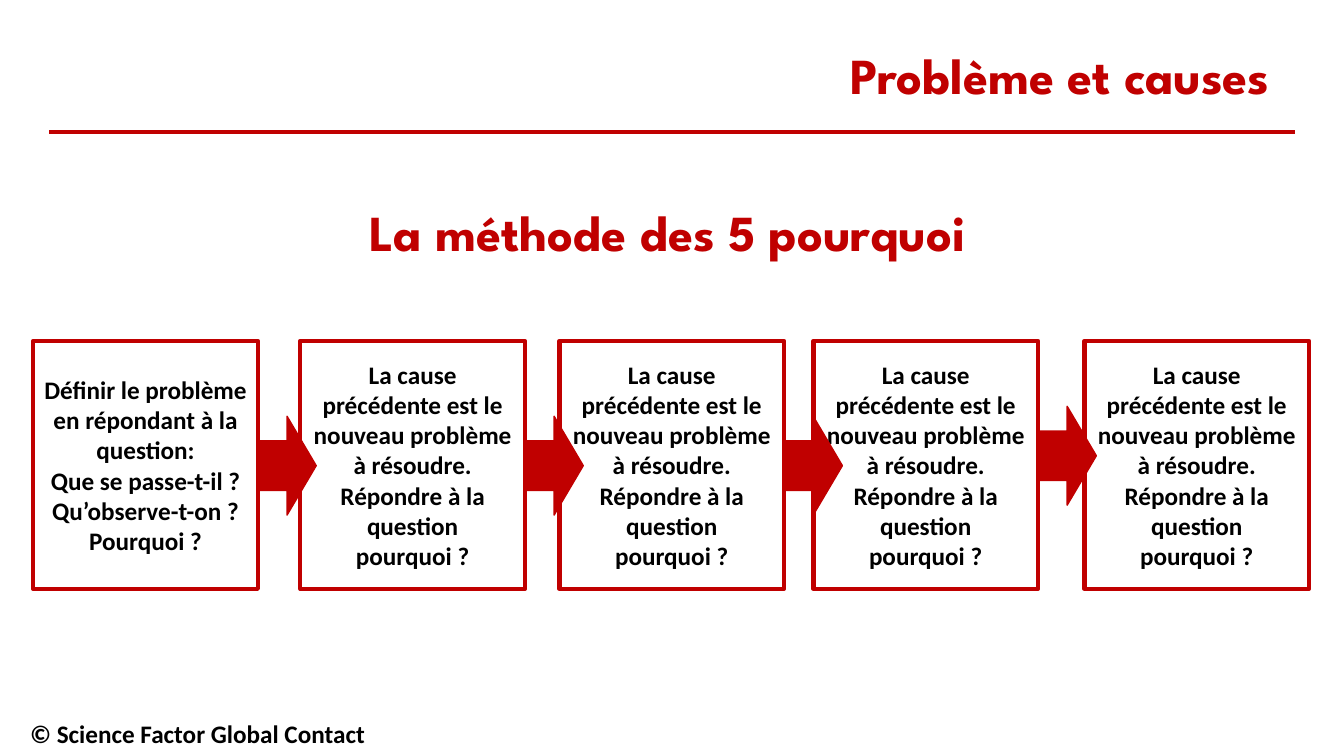
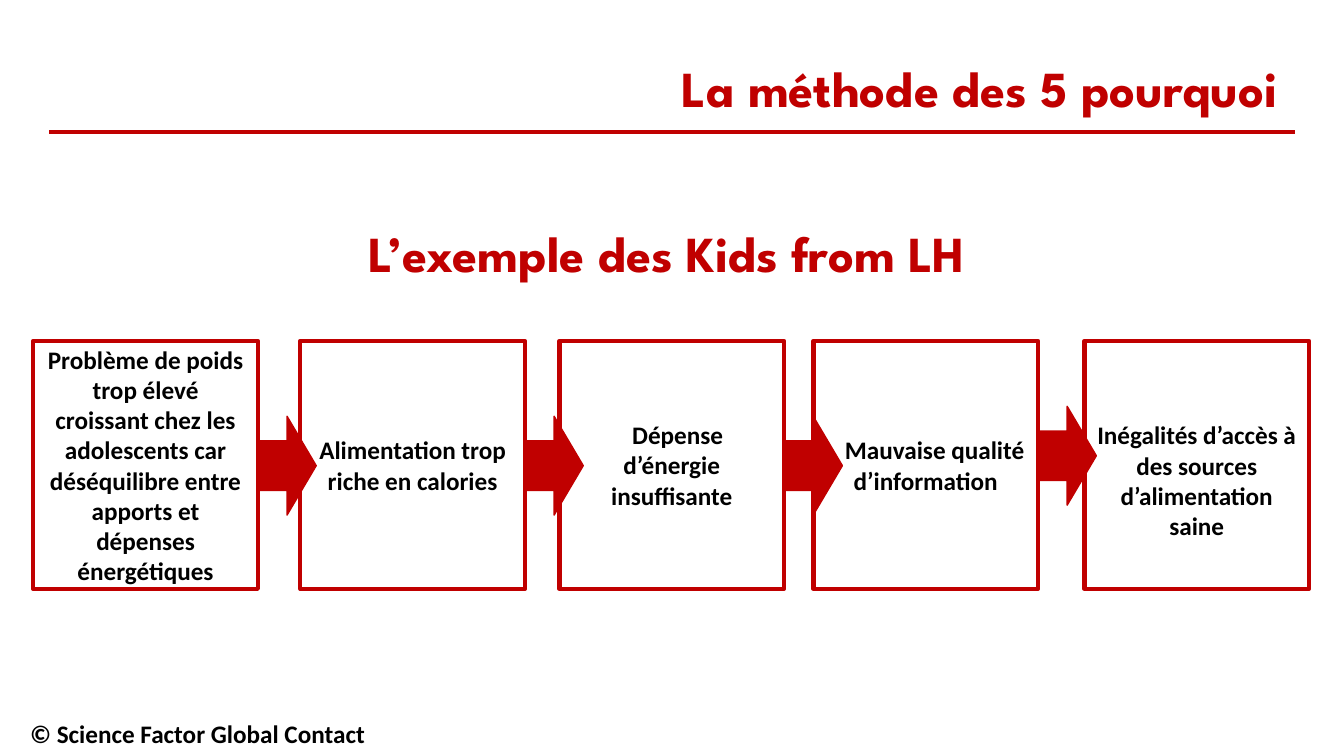
from pptx import Presentation
from pptx.dml.color import RGBColor
from pptx.enum.shapes import MSO_CONNECTOR, MSO_SHAPE
from pptx.enum.text import MSO_ANCHOR as Anchor, MSO_AUTO_SIZE as AutoSize, PP_ALIGN as Align
from pptx.oxml.ns import qn
from pptx.util import Cm, Pt
from lxml import etree

RED, WHITE, BLACK = "C00000", "FFFFFF", "000000"
HEADING_FONT, BODY_FONT = "League Spartan", "Calibri"
CARD_LEFTS = (0.84, 7.57, 14.1, 20.5, 27.33)
CARD_TOP, CARD_WIDTH, CARD_HEIGHT = 8.59, 5.66, 6.25
ARROW_TOPS = (10.49, 10.49, 10.49, 10.24)
ARROW_WIDTH, ARROW_HEIGHT = 1.47, 2.49


def color(hex_value):
    return RGBColor.from_string(hex_value)


def write(frame, text, font=BODY_FONT, size=18, ink=BLACK, align=Align.LEFT,
          anchor=Anchor.TOP, first_indent=0, top_inset=0.13, right_inset=0.25):
    """Fill a text frame, one paragraph per line of text; insets are in cm."""
    frame.word_wrap = True
    frame.auto_size = AutoSize.NONE
    frame.vertical_anchor = anchor
    frame.margin_left, frame.margin_right = Cm(0.25), Cm(right_inset)
    frame.margin_top, frame.margin_bottom = Cm(top_inset), Cm(0.13)
    for number, line in enumerate(text.split("\n")):
        paragraph = frame.add_paragraph() if number else frame.paragraphs[0]
        paragraph.alignment = align
        if first_indent:
            paragraph._p.get_or_add_pPr().set("indent", str(Cm(first_indent)))
        run = paragraph.add_run()
        run.text = line
        run.font.name, run.font.size, run.font.bold = font, Pt(size), True
        run.font.color.rgb = color(ink)


class Deck:
    def __init__(self):
        self.presentation = Presentation()
        self.presentation.slide_width = Cm(33.87)
        self.presentation.slide_height = Cm(19.05)
        self.slide = None

    def start_slide(self, title, left, top, width):
        """Add a slide with its title, rule and copyright line."""
        title_only = self.presentation.slide_layouts[5]
        self.slide = self.presentation.slides.add_slide(title_only)
        self.rule()
        heading = self.slide.shapes.title
        heading.left, heading.top = Cm(left), Cm(top)
        heading.width, heading.height = Cm(width), Cm(1.8)
        self.heading_text(heading.text_frame, title)
        self.copyright()

    def heading_text(self, frame, text):
        write(frame, text, font=HEADING_FONT, size=36, ink=RED,
              align=Align.RIGHT, right_inset=0.64)

    def text_box(self, left, top, width, height):
        box = self.slide.shapes.add_textbox(Cm(left), Cm(top), Cm(width), Cm(height))
        return box.text_frame

    def subtitle(self, text, top):
        self.heading_text(self.text_box(7.24, top, 17.73, 1.8), text)

    def copyright(self):
        write(self.text_box(0.51, 17.96, 9.9, 1.02), "© Science Factor Global Contact")

    def rule(self):
        line = self.slide.shapes.add_connector(
            MSO_CONNECTOR.STRAIGHT, Cm(1.24), Cm(3.33), Cm(32.64), Cm(3.33))
        line.line.color.rgb = color(RED)
        line.line.width = Pt(3.25)
        etree.SubElement(line._element.spPr, qn("a:effectLst"))

    def shape(self, kind, left, top, width, height, fill, border):
        shape = self.slide.shapes.add_shape(kind, Cm(left), Cm(top), Cm(width), Cm(height))
        shape.shadow.inherit = False
        shape.fill.solid()
        shape.fill.fore_color.rgb = color(fill)
        shape.line.color.rgb = color(RED)
        shape.line.width = Pt(border)
        return shape

    def card(self, left, text, **text_format):
        card = self.shape(MSO_SHAPE.RECTANGLE, left, CARD_TOP,
                          CARD_WIDTH, CARD_HEIGHT, WHITE, 3)
        write(card.text_frame, text, align=Align.CENTER, anchor=Anchor.MIDDLE, **text_format)

    def chain(self, steps):
        """Draw the cards, then an arrow from each card to the next."""
        for left, (text, text_format) in zip(CARD_LEFTS, steps):
            self.card(left, text, **text_format)
        for left, top in zip(CARD_LEFTS, ARROW_TOPS):
            self.shape(MSO_SHAPE.RIGHT_ARROW, left + CARD_WIDTH, top,
                       ARROW_WIDTH, ARROW_HEIGHT, RED, 1)


def main():
    problem = ("Définir le problème en répondant à la question:\n"
               "Que se passe-t-il ? Qu’observe-t-on ?\nPourquoi ?")
    next_why = ("La cause précédente est le nouveau problème à résoudre.\n"
                "Répondre à la question\npourquoi ?")
    example = [
        ("Problème de poids trop élevé croissant chez les adolescents car "
         "déséquilibre entre apports et dépenses énergétiques", {}),
        ("Alimentation trop riche en calories", {}),
        ("Dépense d’énergie insuffisante", {"first_indent": 0.3}),
        ("Mauvaise qualité d’information", {"first_indent": 0.45}),
        ("Inégalités d’accès à des sources d’alimentation saine", {"top_inset": 0.9}),
    ]

    deck = Deck()
    deck.start_slide("Problème et causes", left=7.72, top=0.99, width=24.92)
    deck.subtitle("La méthode des 5 pourquoi", top=4.95)
    deck.chain([(problem, {})] + [(next_why, {})] * 4)

    deck.start_slide("La méthode des 5 pourquoi", left=15.04, top=1.32, width=17.8)
    deck.subtitle("L’exemple des Kids from LH", top=5.46)
    deck.chain(example)
    deck.presentation.save("out.pptx")


if __name__ == "__main__":
    main()
